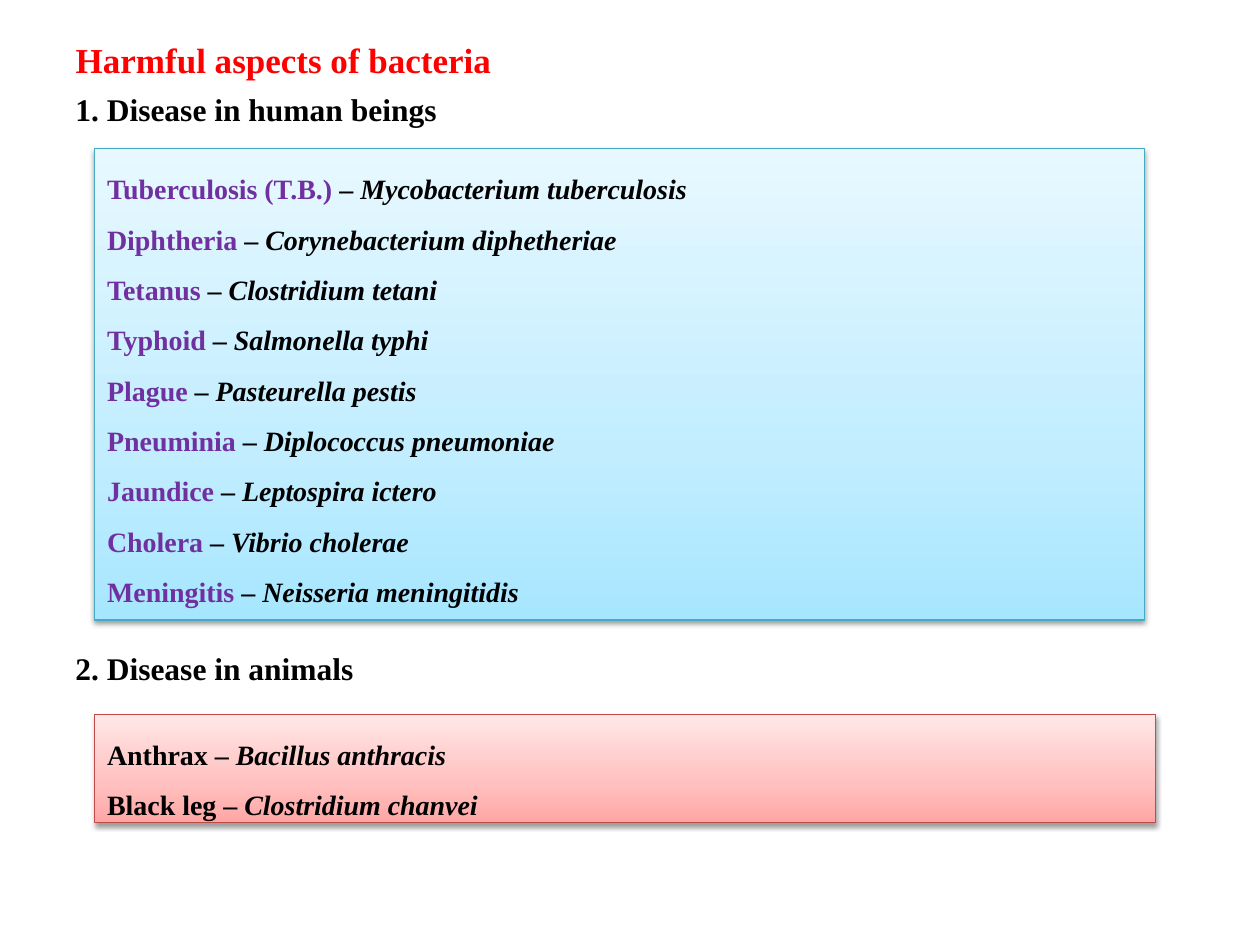
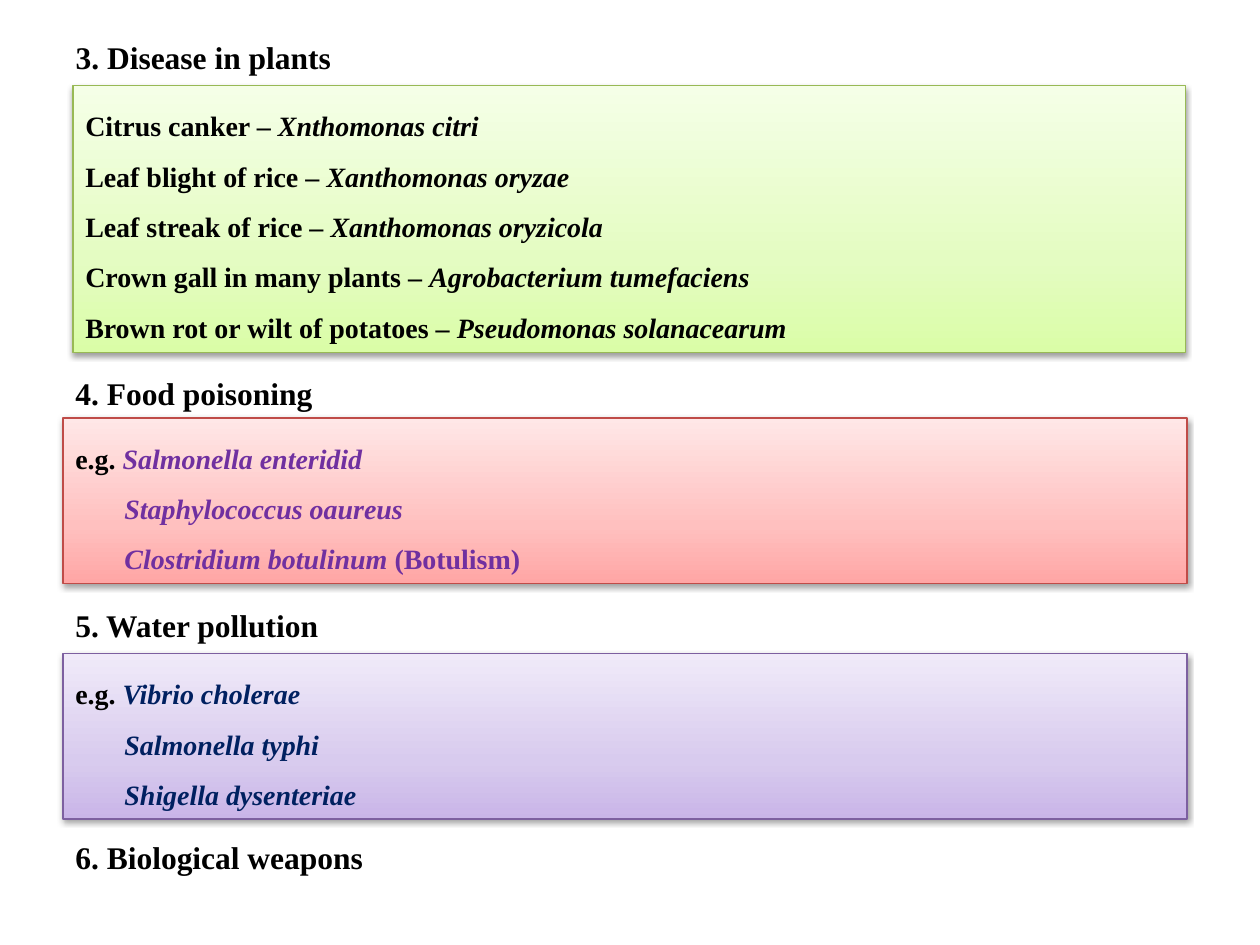
from copy import deepcopy

from lxml.etree import SubElement
from pptx import Presentation
from pptx.dml.color import RGBColor
from pptx.enum.shapes import MSO_SHAPE
from pptx.enum.text import MSO_ANCHOR, MSO_AUTO_SIZE, PP_ALIGN
from pptx.oxml.ns import qn
from pptx.util import Cm, Pt

BLACK = RGBColor(0x00, 0x00, 0x00)
RED = RGBColor(0xFF, 0x00, 0x00)
PURPLE = RGBColor(0x70, 0x30, 0xA0)
NAVY = RGBColor(0x00, 0x20, 0x60)

SKY, ROSE, LIME, VIOLET = (
    {"line": RGBColor.from_string(line), "stops": [RGBColor.from_string(stop) for stop in stops]}
    for line, *stops in (
        ("46AAC5", "A7E6FF", "C1EDFF", "E7F8FF"),
        ("BF4C48", "FFA6A5", "FFC0BF", "FFE7E7"),
        ("98B955", "DAFDA7", "E4FCC2", "F5FFE7"),
        ("7D60A0", "C9B5E8", "D8CBEE", "F0EAF9"),
    )
)
STOP_POSITIONS = (0, 0.35, 1)

HUMAN_DISEASES = [
    ("Tuberculosis (T.B.)", "Mycobacterium tuberculosis"),
    ("Diphtheria", "Corynebacterium diphetheriae"),
    ("Tetanus", "Clostridium tetani"),
    ("Typhoid", "Salmonella typhi"),
    ("Plague", "Pasteurella pestis"),
    ("Pneuminia", "Diplococcus pneumoniae"),
    ("Jaundice", "Leptospira ictero"),
    ("Cholera", "Vibrio cholerae"),
    ("Meningitis", "Neisseria meningitidis"),
]
ANIMAL_DISEASES = [
    ("Anthrax", "Bacillus anthracis"),
    ("Black leg", "Clostridium chanvei"),
]
PLANT_DISEASES = [
    ("Citrus canker", "Xnthomonas citri"),
    ("Leaf blight of rice", "Xanthomonas oryzae"),
    ("Leaf streak of rice", "Xanthomonas oryzicola"),
    ("Crown gall in many plants", "Agrobacterium tumefaciens"),
    ("Brown rot or wilt of potatoes", "Pseudomonas solanacearum"),
]
FOOD_POISONERS = [
    ("Salmonella enteridid", ""),
    ("Staphylococcus oaureus", ""),
    ("Clostridium botulinum", " (Botulism)"),
]
WATER_POLLUTERS = [("Vibrio cholerae", ""), ("Salmonella typhi", ""), ("Shigella dysenteriae", "")]

TITLE_FORMAT = {"size": Pt(20), "color": RED}
HEADING_FORMAT = {"size": Pt(18), "color": BLACK}
ENTRY_SIZE = Pt(16)
HEADING_LEFT = 1.27
EXAMPLE_INDENT = Cm(0.99)


def disease_lines(diseases, color=BLACK):
    """Return (indent, runs) for each disease and its organism."""
    return [
        (0, [(disease, color, False), (" – ", BLACK, False), (organism, BLACK, True)])
        for disease, organism in diseases
    ]


def example_lines(examples, color):
    """Return (indent, runs) for organisms listed after one "e.g."."""
    lines = []
    for index, (organism, note) in enumerate(examples):
        runs = [(organism, color, True)]
        if note:
            runs.append((note, color, False))
        if index == 0:
            runs.insert(0, ("e.g. ", BLACK, False))
        lines.append((EXAMPLE_INDENT if index else 0, runs))
    return lines


SLIDES = [
    {
        "headings": [
            ("Harmful aspects of bacteria", 0.64, 8.94, 1.12, TITLE_FORMAT),
            ("1. Disease in human beings", 1.7, 7.87, 1.02, HEADING_FORMAT),
            ("2. Disease in animals", 12.95, 6.17, 1.02, HEADING_FORMAT),
        ],
        "panels": [
            ((1.91, 3, 21.16, 9.5), SKY, disease_lines(HUMAN_DISEASES, PURPLE)),
            ((1.91, 14.4, 21.39, 2.18), ROSE, disease_lines(ANIMAL_DISEASES)),
        ],
    },
    {
        "headings": [
            ("3. Disease in plants", 0.64, 5.72, 1.02, HEADING_FORMAT),
            ("4. Food poisoning", 7.42, 5.33, 1.02, HEADING_FORMAT),
            ("5. Water pollution", 12.09, 5.46, 1.02, HEADING_FORMAT),
            ("6. Biological weapons", 16.76, 6.38, 1.02, HEADING_FORMAT),
        ],
        "panels": [
            ((1.47, 1.73, 22.43, 5.38), LIME, disease_lines(PLANT_DISEASES)),
            ((1.27, 8.43, 22.66, 3.33), ROSE, example_lines(FOOD_POISONERS, PURPLE)),
            ((1.27, 13.18, 22.66, 3.33), VIOLET, example_lines(WATER_POLLUTERS, NAVY)),
        ],
    },
]


def set_all(target, **values):
    """Set each named attribute of the target."""
    for name, value in values.items():
        setattr(target, name, value)


def add_run(paragraph, text, color, size, italic=False):
    """Add bold text to a paragraph."""
    run = paragraph.add_run()
    run.text = text
    set_all(run.font, name="Times New Roman", size=size, bold=True, italic=italic)
    run.font.color.rgb = color


def write_heading(heading, text, top, width, height, style):
    """Place and write one heading."""
    set_all(heading, left=Cm(HEADING_LEFT), top=Cm(top), width=Cm(width), height=Cm(height))
    set_all(
        heading.text_frame,
        word_wrap=False,
        auto_size=MSO_AUTO_SIZE.SHAPE_TO_FIT_TEXT,
        vertical_anchor=MSO_ANCHOR.TOP,
    )
    paragraph = heading.text_frame.paragraphs[0]
    paragraph.alignment = PP_ALIGN.LEFT
    add_run(paragraph, text, **style)


def paint(panel, theme):
    """Give a panel its gradient, outline and shadow."""
    panel.fill.gradient()
    panel.fill.gradient_angle = 90
    properties = panel._element.spPr
    stop_list = properties.find(".//" + qn("a:gsLst"))
    stop_list.append(deepcopy(stop_list[0]))
    for stop, color, position in zip(panel.fill.gradient_stops, theme["stops"], STOP_POSITIONS):
        stop.color.rgb = color
        stop.position = position
    panel.line.color.rgb = theme["line"]
    panel.line.width = Pt(0.75)
    panel.shadow.inherit = False
    shadow = SubElement(
        properties.find(qn("a:effectLst")), qn("a:outerShdw"),
        blurRad="40000", dist="20000", dir="5400000", rotWithShape="0",
    )
    shade = SubElement(shadow, qn("a:srgbClr"), val="000000")
    SubElement(shade, qn("a:alpha"), val="38000")


def add_panel(slide, box, theme, lines):
    """Add a shaded panel holding the given lines."""
    panel = slide.shapes.add_shape(MSO_SHAPE.RECTANGLE, *map(Cm, box))
    paint(panel, theme)
    frame = panel.text_frame
    set_all(
        frame,
        word_wrap=True,
        auto_size=MSO_AUTO_SIZE.SHAPE_TO_FIT_TEXT,
        vertical_anchor=MSO_ANCHOR.TOP,
    )
    for index, (indent, runs) in enumerate(lines):
        paragraph = frame.add_paragraph() if index else frame.paragraphs[0]
        set_all(paragraph, alignment=PP_ALIGN.LEFT, line_spacing=1.5)
        if indent:
            paragraph._p.get_or_add_pPr().set("marL", str(indent))
        for text, color, italic in runs:
            add_run(paragraph, text, color, ENTRY_SIZE, italic)


def main():
    """Build and save the presentation."""
    deck = Presentation()
    set_all(deck, slide_width=Cm(25.4), slide_height=Cm(19.05))
    for content in SLIDES:
        slide = deck.slides.add_slide(deck.slide_layouts[5])
        for index, heading in enumerate(content["headings"]):
            place = slide.shapes.add_textbox(0, 0, 0, 0) if index else slide.shapes.title
            write_heading(place, *heading)
        for panel in content["panels"]:
            add_panel(slide, *panel)
    deck.save("out.pptx")


if __name__ == "__main__":
    main()
